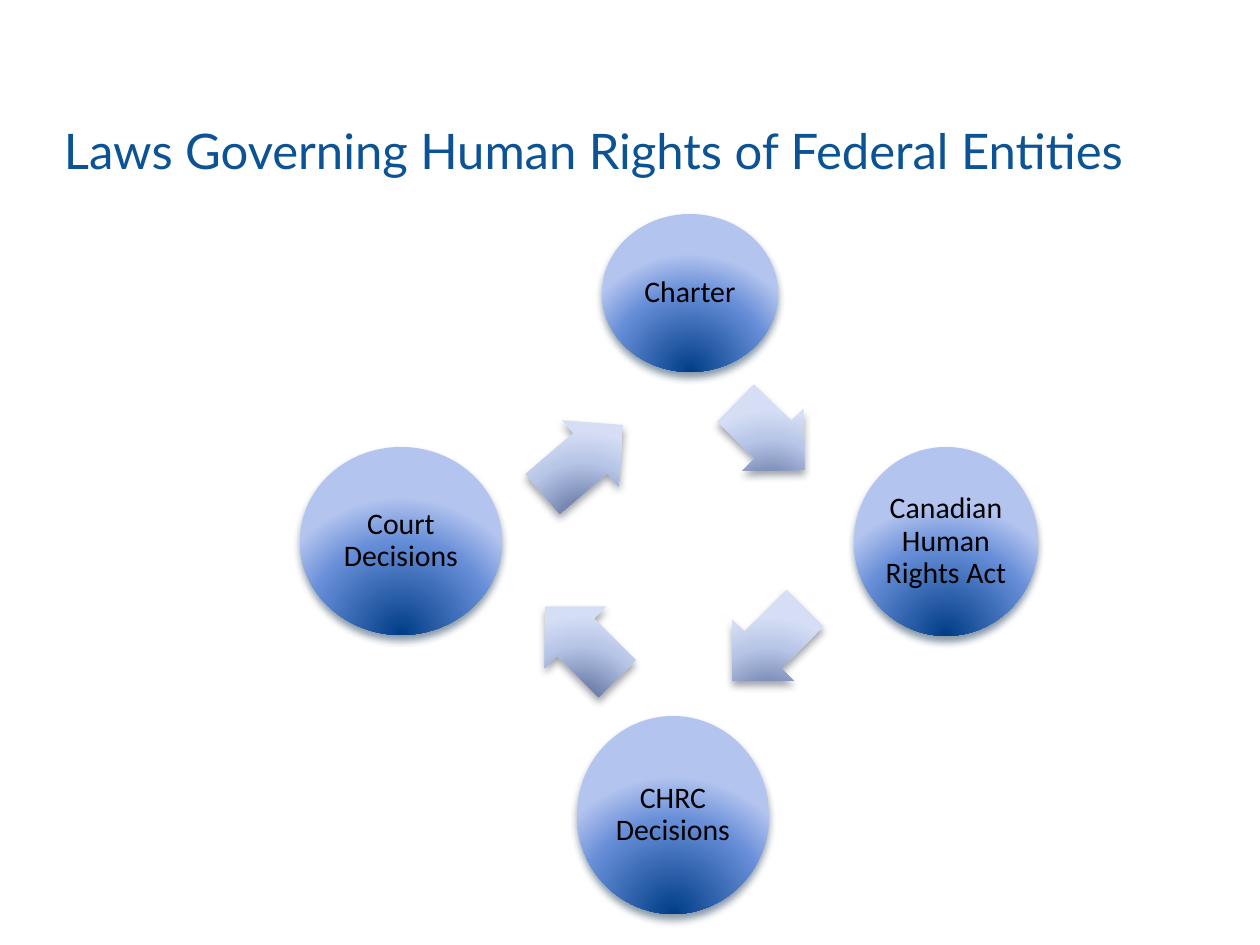
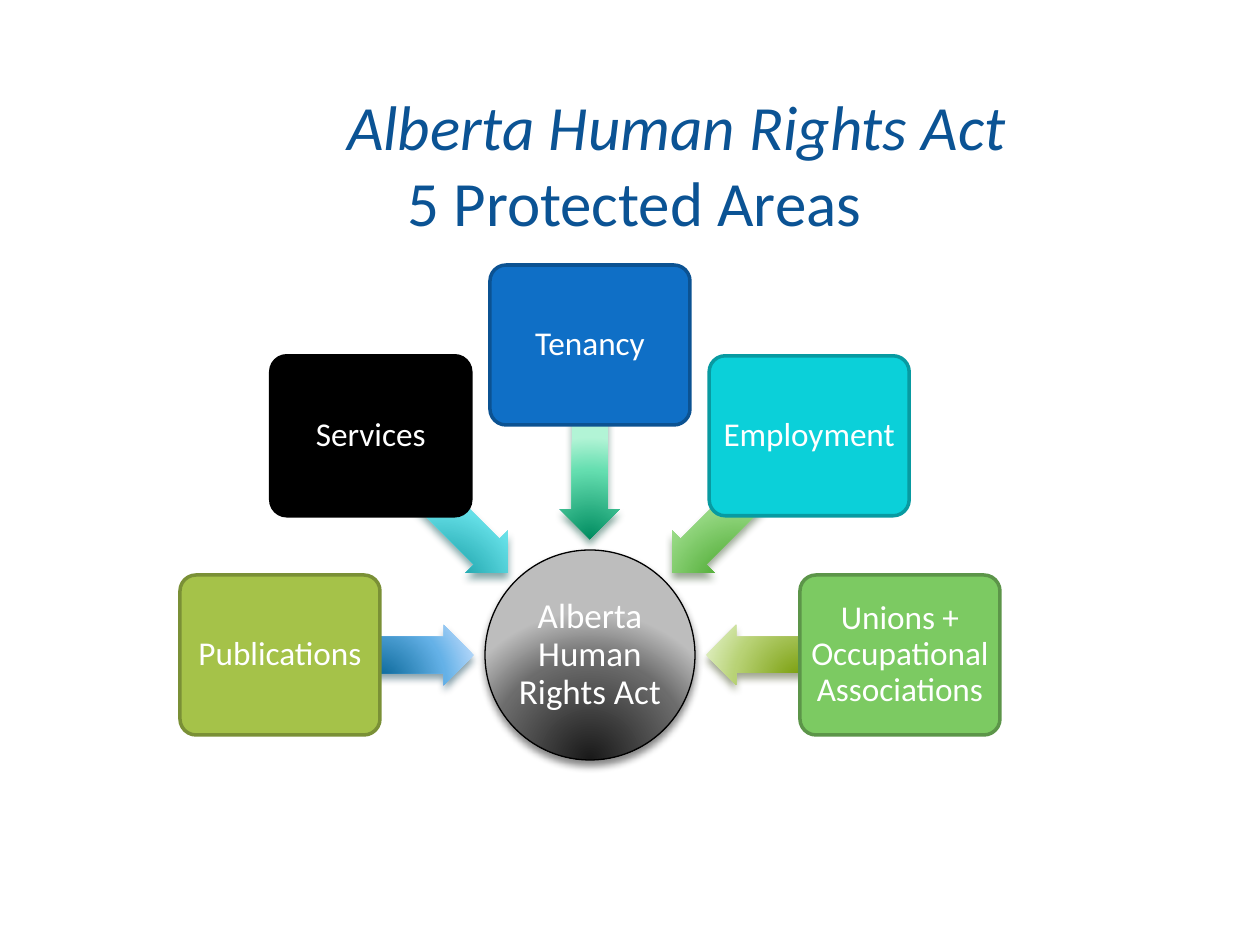
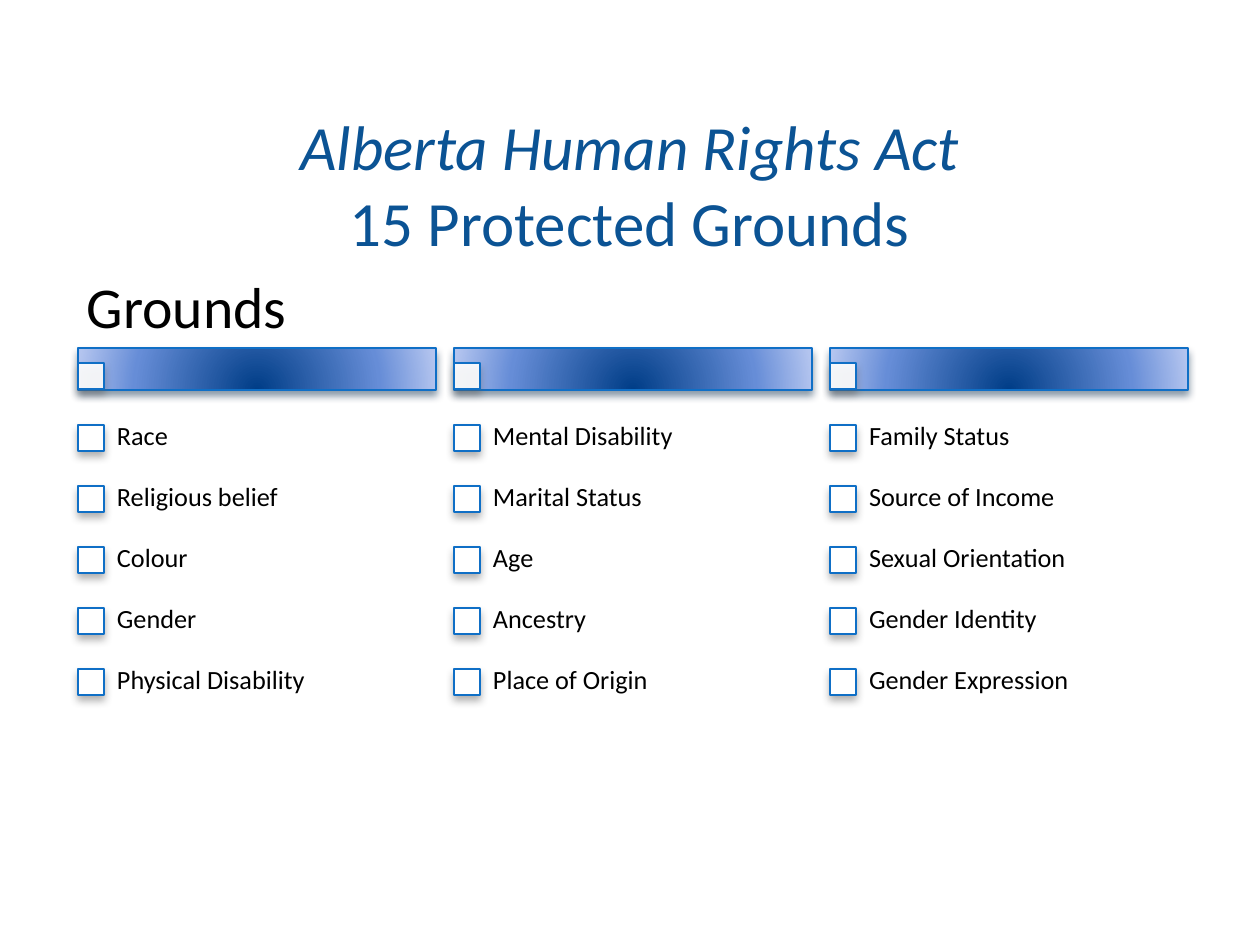
import math

from lxml import etree
from pptx import Presentation, util as u
from pptx.dml.color import RGBColor
from pptx.enum import shapes, text
from pptx.oxml import ns

PX = u.Inches(1) / 126
TITLE_BLUE = RGBColor(0x0B, 0x53, 0x94)
ACCENT_BLUE = RGBColor(0x0F, 0x6F, 0xC6)
BLACK = RGBColor(0, 0, 0)
WHITE = RGBColor(0xFF, 0xFF, 0xFF)
CHECK_SHADOW = RGBColor(0x5A, 0x5A, 0x5A)


def rgb(*codes):
    return [RGBColor.from_string(code) for code in codes]


# Each glow lists the dark, middle and light gradient colours, then the shadow colour.
BLUE_GLOW = rgb("003D87", "668DD7", "B3C4EF", "042747")
PALE_GLOW = rgb("4A5F8F", "B7C5E7", "D5DEF5", "3C414F")
GREY_GLOW = rgb("191919", "6C6C6C", "BDBDBD", "000000")

LAW_CIRCLES = [
    ("Charter", (602, 214, 176, 158)),
    ("Canadian Human Rights Act", (854, 447, 184, 189)),
    ("CHRC Decisions", (577, 716, 192, 198)),
    ("Court Decisions", (300, 447, 202, 188)),
]
CYCLE_ARROWS = [
    ((722, 393, 96, 87), 44.2),
    ((717, 601, 103, 87), 135),
    ((530, 599, 102, 87), 225),
    ((530, 416, 106, 87), 319.4),
]
# Name, card fill and line, arrow glow; clockwise from the left.
AREAS = [
    ("Publications", rgb("A5C249", "7A9036"), rgb("006091", "64B1E7", "B1D6F9", "00374C")),
    ("Services", [BLACK, BLACK], rgb("008A91", "64DFE7", "B1F3F9", "024B4E")),
    ("Tenancy", rgb("0F6FC6", "0B5292"), rgb("008C60", "65DEB0", "B2F4D6", "044A37")),
    ("Employment", rgb("0BD0D9", "089AA1"), rgb("319811", "95D882", "C6EFBD", "2B4821")),
    ("Unions + Occupational Associations", rgb("7CCA62", "5C9549"),
     rgb("729800", "B8D275", "DBECB9", "3A4519")),
]
GROUNDS = [
    ["Race", "Religious belief", "Colour", "Gender", "Physical Disability"],
    ["Mental Disability", "Marital Status", "Age", "Ancestry", "Place of Origin"],
    ["Family Status", "Source of Income", "Sexual Orientation", "Gender Identity",
     "Gender Expression"],
]


def emu(*lengths):
    return [round(length * PX) for length in lengths]


def centred(x, y, width, height):
    return x - width / 2, y - height / 2, width, height


def add_element(parent, tag, **attributes):
    element = etree.SubElement(parent, ns.qn(tag))
    for name, value in attributes.items():
        element.set(name, str(value))
    return element


def add_color(parent, color, alpha=None):
    element = add_element(parent, "a:srgbClr", val=color)
    if alpha is not None:
        add_element(element, "a:alpha", val=alpha * 1000)


def set_insets(frame, left, top, right, bottom):
    (frame.margin_left, frame.margin_top,
     frame.margin_right, frame.margin_bottom) = emu(left, top, right, bottom)


def set_glow(shape, colors):
    """Fill with a circular gradient centred below the shape, upright under rotation."""
    shape.fill.gradient()
    gradient = shape._element.spPr.find(ns.qn("a:gradFill"))
    for child in list(gradient):
        gradient.remove(child)
    gradient.set("rotWithShape", "0")
    stops = add_element(gradient, "a:gsLst")
    for position, color in zip((0, 68, 100), colors):
        add_color(add_element(stops, "a:gs", pos=position * 1000), color)
    circle = add_element(gradient, "a:path", path="circle")
    add_element(circle, "a:fillToRect", l=50000, t=130000, r=50000, b=-30000)


def set_shadow(shape, color):
    effects = shape._element.spPr.find(ns.qn("a:effectLst"))
    shadow = add_element(effects, "a:outerShdw", blurRad=u.Pt(4.5), dist=u.Pt(3),
                         dir=5400000, algn="ctr", rotWithShape=0)
    add_color(shadow, color, 48)


def add_figure(slide, kind, box, fill=None, glow=None, line=None, line_width=0.75,
               adjustments=()):
    shape = slide.shapes.add_shape(kind, *emu(*box))
    for index, value in enumerate(adjustments):
        shape.adjustments[index] = value
    shape.shadow.inherit = False
    if glow:
        set_glow(shape, glow[:3])
        set_shadow(shape, glow[3])
    else:
        shape.fill.solid()
        shape.fill.fore_color.rgb = fill
    if line is None:
        shape.line.fill.background()
    else:
        shape.line.color.rgb = line
        shape.line.width = u.Pt(line_width)
    return shape


def add_arrow(slide, kind, box, rotation, glow):
    arrow = add_figure(slide, kind, box, glow=glow, adjustments=(0.6, 0.5))
    arrow.rotation = rotation % 360


def write(shape, words, size, color, insets, align=text.PP_ALIGN.CENTER):
    frame = shape.text_frame
    frame.word_wrap = True
    frame.vertical_anchor = text.MSO_ANCHOR.MIDDLE
    set_insets(frame, *insets)
    paragraph = frame.paragraphs[0]
    paragraph.text = words
    paragraph.alignment = align
    paragraph.line_spacing = 0.9
    paragraph.font.name = "Calibri"
    paragraph.font.size = u.Pt(size)
    paragraph.font.color.rgb = color


def add_label(slide, box, words, size, insets):
    write(slide.shapes.add_textbox(*emu(*box)), words, size, BLACK, insets,
          text.PP_ALIGN.LEFT)


def add_titled_slide(presentation, box, lines, size=36, font="Calibri",
                     align=text.PP_ALIGN.CENTER, bottom_inset=6):
    """Add a slide whose title lines are (words, italic, left indent) tuples."""
    slide = presentation.slides.add_slide(presentation.slide_layouts[5])
    title = slide.shapes.title
    title.left, title.top, title.width, title.height = emu(*box)
    frame = title.text_frame
    frame.auto_size = text.MSO_AUTO_SIZE.NONE
    frame.word_wrap = True
    frame.vertical_anchor = text.MSO_ANCHOR.BOTTOM
    set_insets(frame, 0, 6, 0, bottom_inset)
    for index, (words, italic, indent) in enumerate(lines):
        paragraph = frame.add_paragraph() if index else frame.paragraphs[0]
        paragraph.text = words
        paragraph.alignment = align
        paragraph._p.get_or_add_pPr().set("marL", str(emu(indent)[0]))
        paragraph.font.name = font
        paragraph.font.size = u.Pt(size)
        paragraph.font.italic = italic
        paragraph.font.color.rgb = TITLE_BLUE
    return slide


def add_checkbox(slide, left, top):
    checkbox = add_figure(slide, shapes.MSO_SHAPE.RECTANGLE, (left, top, 26, 26),
                          fill=WHITE, line=ACCENT_BLUE)
    set_shadow(checkbox, CHECK_SHADOW)
    return checkbox


def build_laws(presentation):
    slide = add_titled_slide(
        presentation, (64, 106, 1181, 139),
        [("Laws Governing Human Rights of Federal Entities", False, 0)],
        size=28, font="Lato", align=text.PP_ALIGN.LEFT, bottom_inset=66)
    for (words, box), (arrow_box, rotation) in zip(LAW_CIRCLES, CYCLE_ARROWS):
        circle = add_figure(slide, shapes.MSO_SHAPE.OVAL, box, glow=BLUE_GLOW)
        write(circle, words, 17, BLACK, (2, 2, 2, 2))
        add_arrow(slide, shapes.MSO_SHAPE.RIGHT_ARROW, arrow_box, rotation, PALE_GLOW)


def build_areas(presentation):
    slide = add_titled_slide(
        presentation, (74, 106, 1109, 139),
        [("Alberta Human Rights Act", True, 96), ("5 Protected Areas", False, 12)])
    hub_x, hub_y = 590, 655
    hub = add_figure(slide, shapes.MSO_SHAPE.OVAL, centred(hub_x, hub_y, 210, 210),
                     glow=GREY_GLOW, line=BLACK)
    write(hub, "Alberta Human Rights Act", 20, WHITE, (1, 1, 1, 1))
    for index, (words, (fill, line), glow) in enumerate(AREAS):
        angle = 180 + 45 * index
        across, down = math.cos(math.radians(angle)), math.sin(math.radians(angle))
        arrow_box = centred(hub_x + 213 * across, hub_y + 213 * down, 194, 60)
        add_arrow(slide, shapes.MSO_SHAPE.LEFT_ARROW, arrow_box, angle, glow)
        card_box = centred(hub_x + 310 * across, hub_y + 310 * down, 200, 160)
        card = add_figure(slide, shapes.MSO_SHAPE.ROUNDED_RECTANGLE, card_box, fill=fill,
                          line=line, line_width=2, adjustments=(0.1,))
        write(card, words, 19, WHITE, (5, 5, 5, 5))


def build_grounds(presentation):
    slide = add_titled_slide(
        presentation, (63, 107, 1134, 158),
        [("Alberta Human Rights Act", True, 0), ("15 Protected Grounds", False, 0)])
    add_label(slide, (78, 272, 358, 76), "Grounds", 33, (9, 6, 9, 6))
    for column, grounds in enumerate(GROUNDS):
        left = 78 + 376 * column
        add_figure(slide, shapes.MSO_SHAPE.RECTANGLE, (left, 348, 358, 42),
                   glow=BLUE_GLOW, line=ACCENT_BLUE)
        header_checkbox = add_checkbox(slide, left, 363)
        fill_color = header_checkbox._element.spPr.find(ns.qn("a:solidFill"))[0]
        add_element(fill_color, "a:alpha", val=90000)
        for row, ground in enumerate(grounds):
            top = 425 + 61 * row
            add_checkbox(slide, left, top)
            add_label(slide, (left + 24, top - 18, 333, 61), ground, 15, (15, 15, 15, 15))


def main():
    presentation = Presentation()
    presentation.slide_width, presentation.slide_height = u.Inches(10), u.Inches(7.5)
    build_laws(presentation)
    build_areas(presentation)
    build_grounds(presentation)
    presentation.save("out.pptx")


if __name__ == "__main__":
    main()
